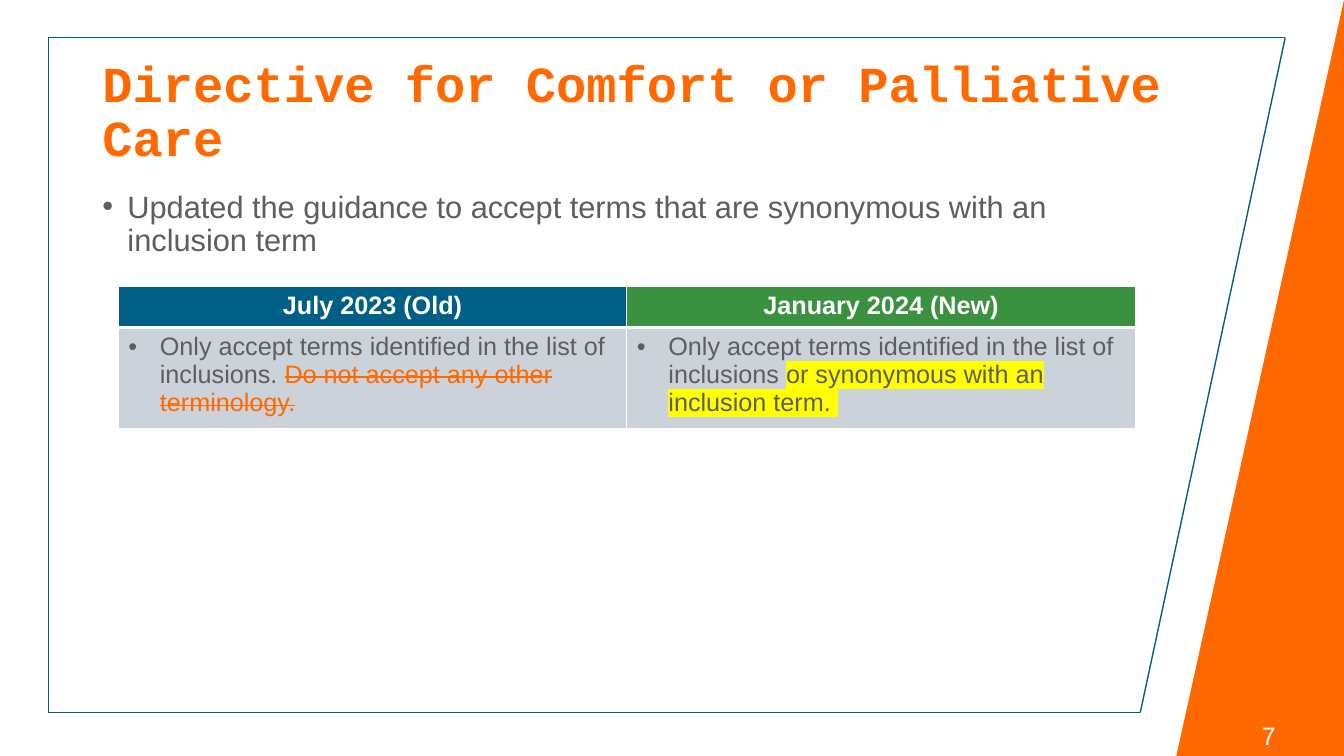
from lxml.etree import SubElement
from pptx import Presentation
from pptx.dml.color import RGBColor
from pptx.enum.shapes import MSO_CONNECTOR as Connector, MSO_SHAPE as Shape
from pptx.enum.text import MSO_ANCHOR as Anchor, PP_ALIGN as Align
from pptx.oxml.ns import qn
from pptx.util import Pt

ORANGE, BLUE, GREEN = "FF6900", "005F86", "3A913F"
GRAY, PALE, WHITE, YELLOW = "5E5E5E", "CCD2D9", "FFFFFF", "FFFF00"


def color(hex_value):
    return RGBColor.from_string(hex_value)


def paint(fill, hex_value):
    fill.solid()
    fill.fore_color.rgb = color(hex_value)


def add_hex(parent, tag, hex_value):
    holder = SubElement(parent, qn(tag))
    SubElement(holder, qn("a:srgbClr")).set("val", hex_value)
    return holder


def add_run(paragraph, text, hex_value, size, name="Arial", bold=False,
            strike=False, highlight=None):
    run = paragraph.add_run()
    run.text = text
    run.font.color.rgb = color(hex_value)
    for key, value in {"size": Pt(size), "name": name, "bold": bold}.items():
        setattr(run.font, key, value)
    properties = run.font._element
    if strike:
        properties.set("strike", "sngStrike")
    if highlight:
        mark = add_hex(properties, "a:highlight", highlight)
        properties.find(qn("a:solidFill")).addnext(mark)


def add_bullet(paragraph, indent):
    properties = paragraph._p.get_or_add_pPr()
    properties.set("marL", str(Pt(indent)))
    properties.set("indent", str(-Pt(indent)))
    SubElement(properties, qn("a:buFont")).set("typeface", "Arial")
    SubElement(properties, qn("a:buChar")).set("char", "•")


def add_text(slide, left, top, width, height):
    frame = slide.shapes.add_textbox(
        Pt(left), Pt(top), Pt(width), Pt(height)).text_frame
    frame.word_wrap = True
    return frame.paragraphs[0]


def add_line(slide, start, end):
    line = slide.shapes.add_connector(
        Connector.STRAIGHT, *(Pt(value) for value in start + end))
    line.line.width = Pt(1)
    line.line.color.rgb = color(BLUE)
    SubElement(line._element.spPr, qn("a:effectLst"))


def add_frame(slide):
    # Orange wedge along the right edge
    wedge = slide.shapes.add_shape(
        Shape.RIGHT_TRIANGLE, Pt(840.24), 0, Pt(119.76), Pt(540))
    wedge.shadow.inherit = False
    paint(wedge.fill, ORANGE)
    wedge.line.fill.background()
    wedge._element.spPr.xfrm.set("flipH", "1")
    # Slanted blue outline
    corners = [(34.5, 27), (918, 27), (814.5, 509), (34.5, 509)]
    for start, end in zip(corners, corners[1:] + corners[:1]):
        add_line(slide, start, end)


def set_title(slide, text):
    title = slide.shapes.title
    place = {"left": 66, "top": 28.8, "width": 828, "height": 104.4}
    for key, value in place.items():
        setattr(title, key, Pt(value))
    title.text_frame.vertical_anchor = Anchor.MIDDLE
    title.text_frame.word_wrap = True
    paragraph = title.text_frame.paragraphs[0]
    paragraph.alignment = Align.LEFT
    paragraph.line_spacing = 0.9
    add_run(paragraph, text, ORANGE, 36, "Courier New", bold=True)


def set_borders(cell, widths):
    properties = cell._tc.get_or_add_tcPr()
    for side, width in zip("LRTB", widths):
        border = SubElement(properties, qn(f"a:ln{side}"))
        border.set("w", str(Pt(width)))
        add_hex(border, "a:solidFill", WHITE)


def add_comparison(slide, versions):
    table = slide.shapes.add_table(
        2, len(versions), Pt(84.5), Pt(204.5), Pt(726.5), Pt(96.5)).table
    for row, height in zip(table.rows, (29.5, 67)):
        row.height = Pt(height)
    for column, (heading, header_color, pieces) in enumerate(versions):
        header, guidance = table.cell(0, column), table.cell(1, column)
        set_borders(header, (1, 1, 1, 3))
        set_borders(guidance, (1, 1, 3, 1))
        paint(header.fill, header_color)
        paint(guidance.fill, PALE)

        heading_line = header.text_frame.paragraphs[0]
        heading_line.alignment = Align.CENTER
        add_run(heading_line, heading, WHITE, 18, bold=True)

        guidance_line = guidance.text_frame.paragraphs[0]
        add_bullet(guidance_line, 22.5)
        for text, hex_value, marks in pieces:
            add_run(guidance_line, text, hex_value, 18, **marks)


def main():
    deck = Presentation()
    deck.slide_width, deck.slide_height = Pt(960), Pt(540)
    slide = deck.slides.add_slide(deck.slide_layouts[5])
    add_frame(slide)
    set_title(slide, "Directive for Comfort or Palliative Care")

    # Summary of the change
    summary = add_text(slide, 66, 133.2, 744.5, 60)
    add_bullet(summary, 18)
    summary.line_spacing = 0.9
    add_run(summary, "Updated the guidance to accept terms that are "
            "synonymous with an inclusion term", GRAY, 22)

    # Old and new wording side by side
    add_comparison(slide, [
        ("July 2023 (Old)", BLUE, [
            ("Only accept terms identified in the list of inclusions. ",
             GRAY, {}),
            ("Do not accept any other terminology.",
             ORANGE, {"strike": True})]),
        ("January 2024 (New)", GREEN, [
            ("Only accept terms identified in the list of inclusions ",
             GRAY, {}),
            ("or synonymous with an inclusion term. ",
             GRAY, {"highlight": YELLOW})]),
    ])

    # Slide number
    number = add_text(slide, 880, 511.2, 52.5, 28.8)
    number.alignment = Align.CENTER
    add_run(number, "7", WHITE, 18)

    deck.save("out.pptx")


if __name__ == "__main__":
    main()
